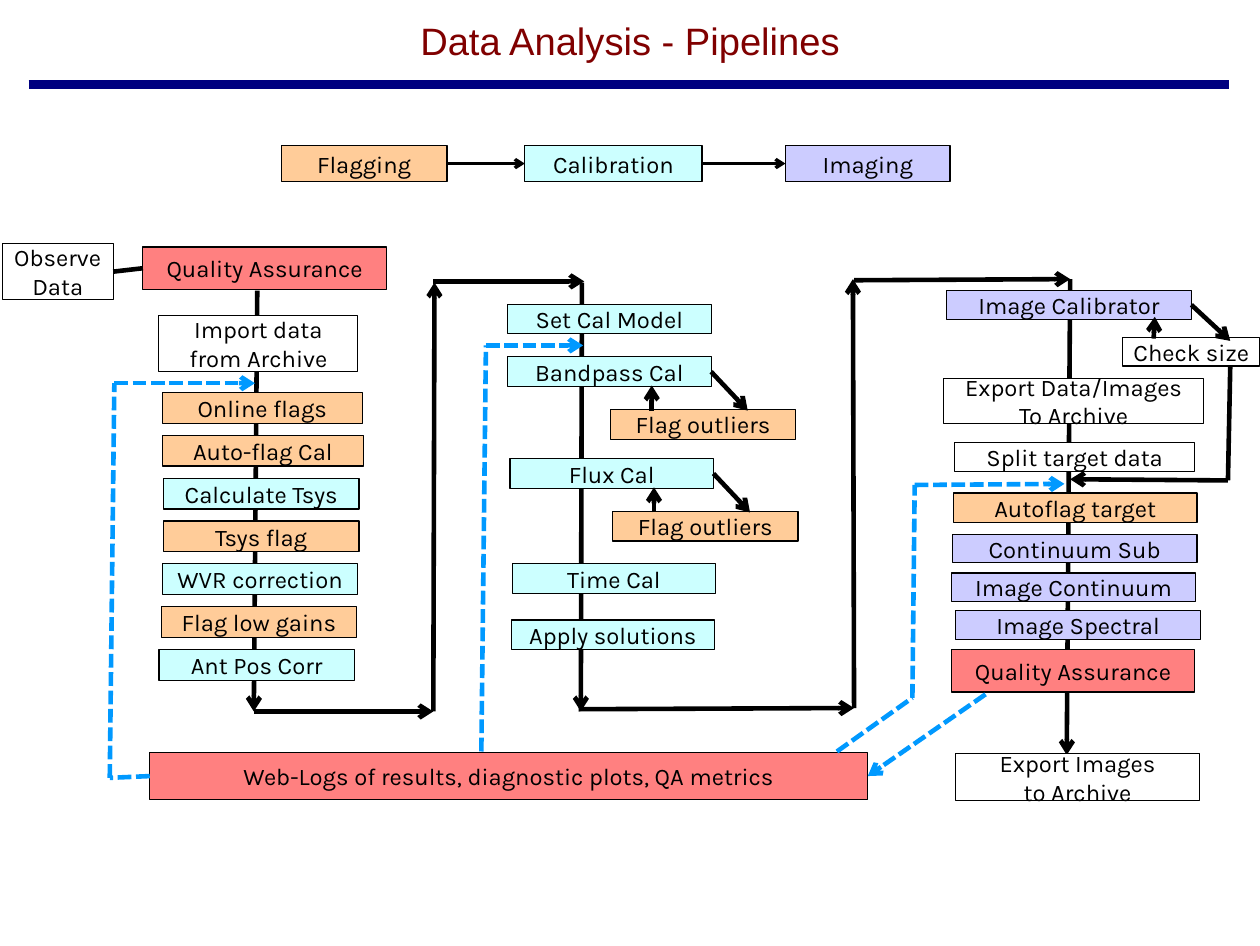
from dataclasses import dataclass
from typing import Any

from lxml.etree import SubElement
from pptx import Presentation
from pptx.dml.color import RGBColor
from pptx.enum.dml import MSO_LINE
from pptx.enum.shapes import MSO_CONNECTOR, MSO_SHAPE
from pptx.enum.text import MSO_ANCHOR, PP_ALIGN
from pptx.oxml.ns import qn
from pptx.util import Inches, Pt

BLACK = RGBColor(0x00, 0x00, 0x00)
WHITE = RGBColor(0xFF, 0xFF, 0xFF)
MAROON = RGBColor(0x80, 0x00, 0x00)
NAVY = RGBColor(0x00, 0x00, 0x80)
ORANGE = RGBColor(0xFF, 0xCC, 0x99)
CYAN = RGBColor(0xCC, 0xFF, 0xFF)
LILAC = RGBColor(0xCC, 0xCC, 0xFF)
RED = RGBColor(0xFF, 0x80, 0x80)
BLUE = RGBColor(0x00, 0x99, 0xFF)

BODY = {"name": "Karla", "size": Pt(15)}
HEAD = {"name": "Arial", "size": Pt(24), "bold": False}
FRAME = {"word_wrap": False, "vertical_anchor": MSO_ANCHOR.MIDDLE}
FLUSH = {"vertical_anchor": MSO_ANCHOR.MIDDLE, "margin_left": 0,
         "margin_right": 0, "margin_top": 0, "margin_bottom": 0}
TOP, LEFT, BOTTOM, RIGHT = range(4)
THICK = 2.89


def apply(target, values):
    for name, value in values.items():
        setattr(target, name, value)


def write(frame, text, font, color):
    frame.text = text
    for para in frame.paragraphs:
        para.alignment = PP_ALIGN.CENTER
        apply(para.font, font)
        para.font.color.rgb = color


@dataclass
class Pane:
    """A region of the slide; its parts are placed from its top left corner."""
    shapes: Any
    x: float
    y: float

    def box(self, text, fill, x, y, w, h):
        shape = self.shapes.add_shape(
            MSO_SHAPE.RECTANGLE, Inches(self.x + x), Inches(self.y + y),
            Inches(w), Inches(h))
        shape.shadow.inherit = False
        shape.fill.solid()
        shape.fill.fore_color.rgb = fill
        shape.line.color.rgb = BLACK
        shape.line.width = 0
        apply(shape.text_frame, FRAME)
        write(shape.text_frame, text, BODY, BLACK)
        return shape

    def link(self, start, end, arrow=True, color=BLACK, width=THICK):
        """Draw a line between points, or (shape, side) pairs to join."""
        ends = [(0, 0) if hasattr(p[0], "shape_id") else
                (Inches(self.x + p[0]), Inches(self.y + p[1]))
                for p in (start, end)]
        line = self.shapes.add_connector(
            MSO_CONNECTOR.STRAIGHT, *ends[0], *ends[1])
        for spot, join in ((start, line.begin_connect),
                           (end, line.end_connect)):
            if hasattr(spot[0], "shape_id"):
                join(*spot)
        line.line.color.rgb = color
        line.line.width = Pt(width)
        if color == BLUE:
            line.line.dash_style = MSO_LINE.SQUARE_DOT
        if arrow:
            SubElement(line.line._get_or_add_ln(), qn("a:tailEnd"), type="arrow")
        SubElement(line._element.spPr, qn("a:effectLst"))

    def chain(self, points, arrows, color=BLACK):
        for start, end, arrow in zip(points, points[1:], arrows):
            self.link(start, end, arrow, color)


def add_head(slide):
    title = slide.shapes.title
    apply(title, {"left": Inches(0.55), "top": Inches(0.15),
                  "width": Inches(9.92), "height": Inches(0.4)})
    apply(title.text_frame, FLUSH)
    write(title.text_frame, "Data Analysis - Pipelines", HEAD, MAROON)
    Pane(slide.shapes, 0.25, 0.74).link((0, 0), (10.5, 0), False, NAVY, 5.75)


def add_key(pane):
    stages = [pane.box(text, fill, x, 0.27, w, 0.32) for text, fill, x, w in (
        ("Flagging", ORANGE, 0.46, 1.45),
        ("Calibration", CYAN, 2.59, 1.55),
        ("Imaging", LILAC, 4.87, 1.44))]
    for one, two in zip(stages, stages[1:]):
        pane.link((one, RIGHT), (two, LEFT), width=0)


def add_flags(pane):
    pane.link((2.25, 0.54), (2.22, 4.22))
    data = pane.box("Observe\nData", WHITE, 0.02, 0.13, 0.97, 0.49)
    check = pane.box("Quality Assurance", RED, 1.25, 0.16, 2.13, 0.37)
    pane.link((data, RIGHT), (check, LEFT), False)
    pane.box("Import data\nfrom Archive", WHITE, 1.39, 0.76, 1.74, 0.49)
    steps = (("Online flags", ORANGE, 1.42, 1.75),
             ("Auto-flag Cal", ORANGE, 1.42, 1.76),
             ("Calculate Tsys", CYAN, 1.43, 1.71),
             ("Tsys flag", ORANGE, 1.43, 1.71),
             ("WVR correction", CYAN, 1.42, 1.71),
             ("Flag low gains", ORANGE, 1.41, 1.71),
             ("Ant Pos Corr", CYAN, 1.39, 1.71))
    for i, (text, fill, x, w) in enumerate(steps):
        pane.box(text, fill, x, 1.43 + 0.375 * i, w, 0.27)
    # Route to the calibration column
    pane.chain([(2.22, 4.22), (3.79, 4.22), (3.8, 0.47)], (True, True))
    pane.link((3.79, 0.46), (5.11, 0.46))


def add_cal(pane):
    pane.link((1.09, 0.47), (1.08, 4.22))
    steps = (("Set Cal Model", 0.44, 0.66, False),
             ("Bandpass Cal", 0.44, 1.12, True),
             ("Flux Cal", 0.46, 2.01, True),
             ("Time Cal", 0.48, 2.93, False),
             ("Apply solutions", 0.47, 3.42, False))
    for text, x, y, loop in steps:
        step = pane.box(text, CYAN, x, y, 1.78, 0.26)
        if loop:
            pane.box("Flag outliers", ORANGE, x + 0.9, y + 0.46, 1.62, 0.26)
            pane.link((step, RIGHT), (x + 2.1, y + 0.47))
            pane.link((x + 1.26, y + 0.47), (x + 1.26, y + 0.25))
    # Route to the imaging column
    pane.chain([(1.06, 4.2), (3.47, 4.19), (3.46, 0.44)], (True, True))
    pane.link((3.47, 0.45), (5.36, 0.44))


def add_image(pane):
    pane.link((1.36, 0.44), (1.33, 4.6))
    steps = (("Image Calibrator", LILAC, 0.28, 0.54, 2.14, 0.25),
             ("Check size", WHITE, 1.82, 0.95, 1.2, 0.25),
             ("Export Data/Images\nTo Archive", WHITE, 0.25, 1.31, 2.28, 0.39),
             ("Split target data", WHITE, 0.35, 1.87, 2.1, 0.25),
             ("Autoflag target", ORANGE, 0.34, 2.31, 2.13, 0.26),
             ("Continuum Sub", LILAC, 0.33, 2.67, 2.14, 0.25),
             ("Image Continuum", LILAC, 0.32, 3.01, 2.14, 0.25),
             ("Image Spectral", LILAC, 0.36, 3.34, 2.14, 0.25),
             ("Quality Assurance", RED, 0.32, 3.68, 2.13, 0.37),
             ("Export Images\nto Archive", WHITE, 0.36, 4.59, 2.13, 0.41))
    first = [pane.box(*step) for step in steps][0]
    # Size check loop
    pane.link((first, RIGHT), (2.76, 0.98))
    pane.link((2.09, 0.96), (2.1, 0.77))
    pane.chain([(2.76, 1.21), (2.74, 2.2), (1.36, 2.19)], (False, True))


def add_logs(pane):
    logs = pane.box("Web-Logs of results, diagnostic plots, QA metrics",
                    RED, 1.31, 4.58, 6.28, 0.41)
    pane.link((8.62, 4.07), (logs, RIGHT), color=BLUE)
    # Feedback to each column
    pane.chain([(logs, LEFT), (0.96, 4.8), (1, 1.35), (2.23, 1.35)],
               (False, False, True), BLUE)
    pane.chain([(4.21, 4.57), (4.25, 1.02), (5.1, 1.02)], (False, True), BLUE)
    pane.chain([(7.32, 4.57), (7.98, 4.1), (8, 2.24), (9.31, 2.23)],
               (False, False, True), BLUE)


def main():
    deck = Presentation()
    deck.slide_width, deck.slide_height = Inches(11.02), Inches(8.27)
    slide = deck.slides.add_slide(deck.slide_layouts.get_by_name("Title Only"))
    add_head(slide)
    for draw, x, y in ((add_key, 2, 1), (add_flags, 0, 2), (add_cal, 4, 2),
                       (add_image, 8, 2), (add_logs, 0, 2)):
        draw(Pane(slide.shapes, x, y))
    deck.save("out.pptx")


if __name__ == "__main__":
    main()
